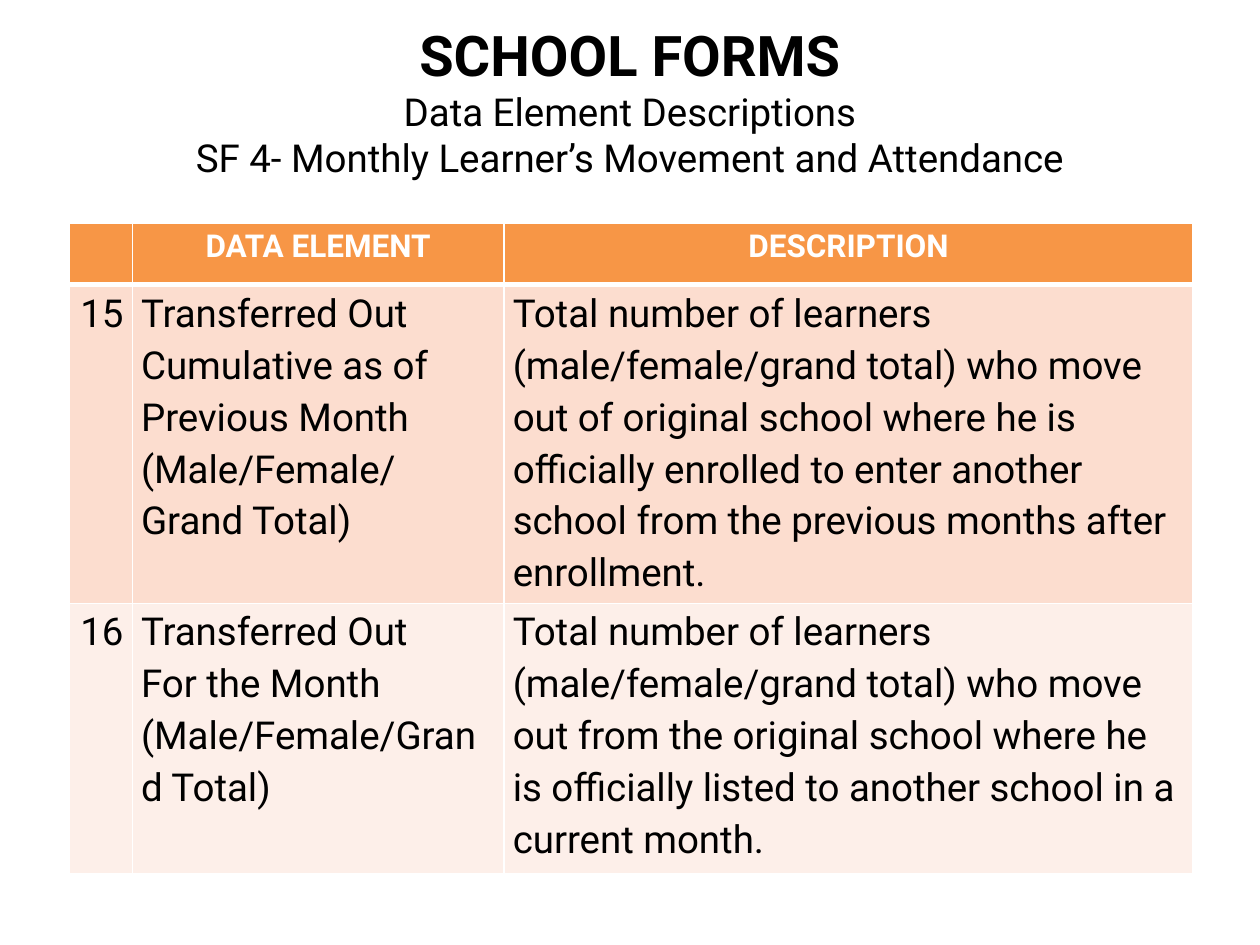
"""Build the SF 4 data element descriptions slide."""
import pptx
import pptx.dml.color
import pptx.enum.text
import pptx.oxml
import pptx.oxml.ns
import pptx.util
from pptx.util import Inches

FONT = "Roboto"
ALIGN = pptx.enum.text.PP_ALIGN
HEADING = [
    ("SCHOOL FORMS", 32, True),
    ("Data Element Descriptions", 22, False),
    ("SF 4- Monthly Learner’s Movement and Attendance", 22, False),
]
ROWS = [
    ["", "DATA ELEMENT", "DESCRIPTION"],
    [
        "15",
        "Transferred Out\nCumulative as of Previous Month (Male/Female/ Grand Total)",
        "Total number of learners (male/female/grand total) who move out of original "
        "school where he is officially enrolled to enter another school from the "
        "previous months after enrollment.",
    ],
    [
        "16",
        "Transferred Out\nFor the Month\n(Male/Female/Grand Total)",
        "Total number of learners (male/female/grand total) who move out from the "
        "original school where he is officially listed to another school in a "
        "current month.",
    ],
]
ROW_FILLS = ["F79646", "FCDDCF", "FDEFE9"]
ROW_HEIGHTS = [0.49, 2.47, 2.15]
COLUMN_WIDTHS = [0.5, 2.95, 5.47]
BODY_ALIGNMENTS = [ALIGN.RIGHT, ALIGN.LEFT, ALIGN.LEFT]


def rgb(value):
    return pptx.dml.color.RGBColor.from_string(value)


def add_run(paragraph, text, size, bold, color):
    run = paragraph.add_run()
    run.text = text
    run.font.name = FONT
    run.font.size = pptx.util.Pt(size)
    run.font.bold = bold
    run.font.color.rgb = rgb(color)


def add_lines(paragraph, lines, color):
    for index, (text, size, bold) in enumerate(lines):
        if index:
            paragraph.add_line_break()
        add_run(paragraph, text, size, bold, color)


def set_borders(cell, bottom_width):
    properties = cell._tc.get_or_add_tcPr()
    widths = {"lnL": 1, "lnR": 1, "lnT": 1, "lnB": bottom_width}
    for position, (side, width) in enumerate(widths.items()):
        properties.insert(position, pptx.oxml.parse_xml(
            f'<a:{side} {pptx.oxml.ns.nsdecls("a")} w="{pptx.util.Pt(width)}">'
            f'<a:solidFill><a:srgbClr val="FFFFFF"/></a:solidFill></a:{side}>'))


def add_heading(slide):
    heading = slide.shapes.add_textbox(Inches(0.5), Inches(0.17), Inches(9), Inches(1.25))
    frame = heading.text_frame
    frame.word_wrap = True
    frame.vertical_anchor = pptx.enum.text.MSO_ANCHOR.MIDDLE
    paragraph = frame.paragraphs[0]
    paragraph.alignment = ALIGN.CENTER
    add_lines(paragraph, HEADING, "000000")


def fill_cell(cell, text, row, column):
    header = row == 0
    cell.fill.solid()
    cell.fill.fore_color.rgb = rgb(ROW_FILLS[row])
    cell.margin_left = cell.margin_right = Inches(0.07)
    cell.margin_top = cell.margin_bottom = 0
    set_borders(cell, 3 if header else 1)
    if not text:
        return
    paragraph = cell.text_frame.paragraphs[0]
    paragraph.alignment = ALIGN.CENTER if header else BODY_ALIGNMENTS[column]
    paragraph.line_spacing = 1.15
    lines = [(line, 18 if header else 22, header) for line in text.split("\n")]
    add_lines(paragraph, lines, "FFFFFF" if header else "000000")


def add_elements(slide):
    elements = slide.shapes.add_table(
        len(ROWS), len(COLUMN_WIDTHS), Inches(0.55), Inches(1.77),
        Inches(sum(COLUMN_WIDTHS)), Inches(sum(ROW_HEIGHTS))).table
    for column, width in zip(elements.columns, COLUMN_WIDTHS):
        column.width = Inches(width)
    for row, height in zip(elements.rows, ROW_HEIGHTS):
        row.height = Inches(height)
    for row, texts in enumerate(ROWS):
        for column, text in enumerate(texts):
            fill_cell(elements.cell(row, column), text, row, column)


def main():
    presentation = pptx.Presentation()
    presentation.slide_width = Inches(10)
    presentation.slide_height = Inches(7.5)
    slide = presentation.slides.add_slide(presentation.slide_layouts[6])
    add_heading(slide)
    add_elements(slide)
    presentation.save("out.pptx")


if __name__ == "__main__":
    main()
